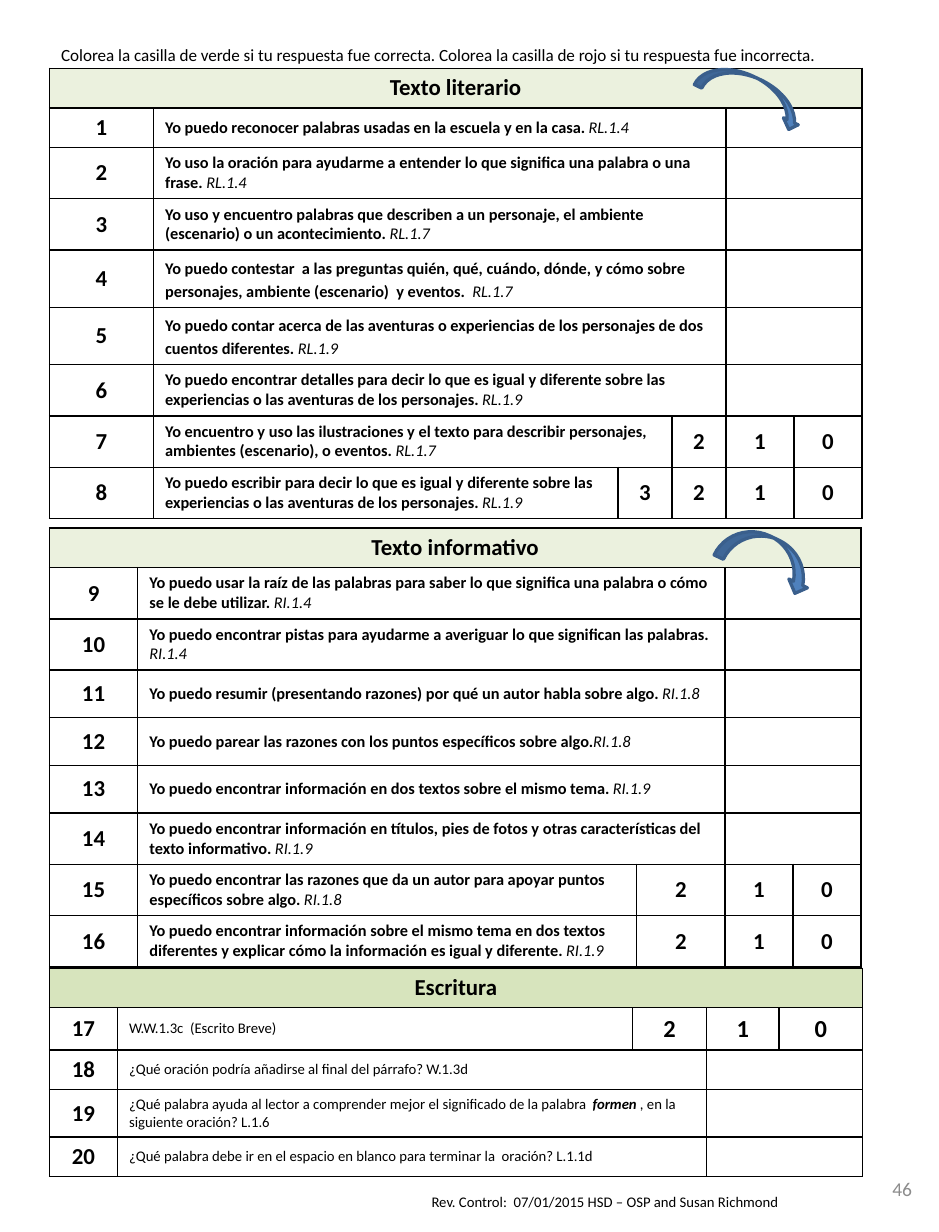
import lxml.etree
import pptx
import pptx.dml.color
import pptx.enum.shapes
import pptx.enum.text
import pptx.oxml.ns
import pptx.util
from dataclasses import dataclass

Cm = pptx.util.Cm
Pt = pptx.util.Pt
RGB = pptx.dml.color.RGBColor.from_string
ALIGN = pptx.enum.text.PP_ALIGN
ANCHOR = pptx.enum.text.MSO_ANCHOR
qn = pptx.oxml.ns.qn


@dataclass(frozen=True)
class Theme:
    font: str = "Calibri"
    ink: str = "000000"
    muted: str = "8C8C8C"
    paper: str = "FFFFFF"
    reading: str = "EBF1DE"
    writing: str = "D7E4BD"
    arrow: str = "4F81BD"
    arrow_line: str = "3A5F8C"
    heading: float = 14
    score: float = 15
    page: float = 12
    intro: float = 10.5
    body: float = 10
    small: float = 9


def add_run(p, text, size, color, font, bold=False, italic=False):
    r = p.add_run()
    r.text = text
    r.font.name = font
    r.font.size = Pt(size)
    r.font.bold = bold
    r.font.italic = italic
    r.font.color.rgb = RGB(color)


class Sheet:
    def __init__(self, prs, theme):
        self.theme = theme
        self.s = prs.slides.add_slide(prs.slide_layouts[5])

    def add_text(self, tf, parts, size, color=None, align=ALIGN.LEFT, spacing=None):
        p = tf.paragraphs[0]
        p.alignment = align
        if spacing:
            p.line_spacing = spacing
        for text, style in parts:
            add_run(p, text, size, color or self.theme.ink, self.theme.font, **style)

    def title(self, text, box):
        sp = self.s.shapes.title
        self.fill_text(sp, box, text, self.theme.intro)

    def label(self, text, box, size, **fmt):
        sp = self.s.shapes.add_textbox(0, 0, 0, 0)
        self.fill_text(sp, box, text, size, **fmt)

    def fill_text(self, sp, box, text, size, anchor=ANCHOR.TOP, **fmt):
        sp.left, sp.top, sp.width, sp.height = map(Cm, box)
        tf = sp.text_frame
        tf.word_wrap = True
        tf.auto_size = pptx.enum.text.MSO_AUTO_SIZE.NONE
        tf.vertical_anchor = anchor
        self.add_text(tf, [(text, {})], size, **fmt)

    def arrow(self, box):
        kind = pptx.enum.shapes.MSO_SHAPE.CURVED_DOWN_ARROW
        sp = self.s.shapes.add_shape(kind, *map(Cm, box))
        sp.rotation = 25.4
        sp.shadow.inherit = False
        sp.fill.solid()
        sp.fill.fore_color.rgb = RGB(self.theme.arrow)
        sp.line.color.rgb = RGB(self.theme.arrow_line)
        sp.line.width = Pt(2)

    def style_cell(self, cell, fill):
        tcPr = cell._tc.get_or_add_tcPr()
        for side in ("a:lnL", "a:lnR", "a:lnT", "a:lnB"):
            ln = lxml.etree.SubElement(tcPr, qn(side), w=str(Pt(1)))
            solid = lxml.etree.SubElement(ln, qn("a:solidFill"))
            lxml.etree.SubElement(solid, qn("a:srgbClr"), val=self.theme.ink)
        cell.fill.solid()
        cell.fill.fore_color.rgb = RGB(fill)
        cell.vertical_anchor = ANCHOR.MIDDLE
        end = cell.text_frame.paragraphs[0]._p.get_or_add_endParaRPr()
        end.set("sz", str(int(self.theme.body * 100)))

    def checklist(self, heading, top, cols, rows, first, fill, styles, size, score):
        th, n = self.theme, len(cols)
        heights = [0.84] + [row[0] for row in rows]
        frame = self.s.shapes.add_table(len(heights), n, Cm(1.07), Cm(top),
                                        Cm(sum(cols)), Cm(sum(heights)))
        table = frame.table
        table.first_row = table.horz_banding = False
        for column, width in zip(table.columns, cols):
            column.width = Cm(width)
        for i, height in enumerate(heights):
            table.rows[i].height = Cm(height)
            for j in range(n):
                self.style_cell(table.cell(i, j), th.paper if i else fill)

        def centred(i, j, text, points):
            self.add_text(table.cell(i, j).text_frame, [(text, {"bold": True})],
                          points, align=ALIGN.CENTER)

        def span(i, start, end):
            if end > start:
                table.cell(i, start).merge(table.cell(i, end))

        span(0, 0, n - 1)
        centred(0, 0, heading, th.heading)
        for i, (_, text, scores, spacing) in enumerate(rows, 1):
            centred(i, 0, str(first + i - 1), th.heading)
            answer = n - (len(scores) or 2)
            span(i, 1, answer - 1)
            self.add_text(table.cell(i, 1).text_frame, zip(text.split("|"), styles),
                          size, spacing=spacing)
            if not scores:
                span(i, answer, n - 1)
            for j, value in enumerate(scores, answer):
                centred(i, j, value, score)


def row(height, text, scores="", spacing=None):
    return height, text, scores, spacing


LITERARY = [
    row(0.84, "Yo puedo reconocer palabras usadas en la escuela y en la casa. |RL.1.4"),
    row(1.1, "Yo uso la oración para ayudarme a entender lo que significa una palabra o una frase. |RL.1.4"),
    row(1.1, "Yo uso y encuentro palabras que describen a un personaje, el ambiente (escenario) o un acontecimiento. |RL.1.7"),
    row(1.23, "Yo puedo contestar  a las preguntas quién, qué, cuándo, dónde, y cómo sobre  personajes, ambiente (escenario)  y eventos.  |RL.1.7", spacing=1.15),
    row(1.23, "Yo puedo contar acerca de las aventuras o experiencias de los personajes de dos cuentos diferentes. |RL.1.9", spacing=1.15),
    row(1.1, "Yo puedo encontrar detalles para decir lo que es igual y diferente sobre las experiencias o las aventuras de los personajes. |RL.1.9"),
    row(1.1, "Yo encuentro y uso las ilustraciones y el texto para describir personajes,  ambientes (escenario), o eventos. |RL.1.7", "210"),
    row(1.1, "Yo puedo escribir para decir lo que es igual y diferente sobre las experiencias o las aventuras de los personajes. |RL.1.9", "3210"),
]
INFORMATIVE = [
    row(1.1, "Yo puedo usar la raíz de las palabras para saber lo que significa una palabra o cómo se le debe utilizar. |RI.1.4"),
    row(1.1, "Yo puedo encontrar pistas para ayudarme a averiguar lo que significan las palabras. |RI.1.4"),
    row(1.03, "Yo puedo resumir (presentando razones) por qué un autor habla sobre algo. |RI.1.8"),
    row(1.03, "Yo puedo parear las razones con los puntos específicos sobre algo.|RI.1.8"),
    row(1.03, "Yo puedo encontrar información en dos textos sobre el mismo tema. |RI.1.9"),
    row(1.1, "Yo puedo encontrar información en títulos, pies de fotos y otras características del texto informativo. |RI.1.9"),
    row(1.1, "Yo puedo encontrar las razones que da un autor para apoyar puntos específicos sobre algo. |RI.1.8", "210"),
    row(1.1, "Yo puedo encontrar información sobre el mismo tema en dos textos diferentes y explicar cómo la información es igual y diferente. |RI.1.9", "210"),
]
WRITING = [
    row(0.91, "W.W.1.3c  (Escrito Breve)", "210"),
    row(0.86, "¿Qué oración podría añadirse al final del párrafo? W.1.3d"),
    row(1.03, "¿Qué palabra ayuda al lector a comprender mejor el significado de la palabra  |formen| , en la siguiente oración? L.1.6"),
    row(0.85, "¿Qué palabra debe ir en el espacio en blanco para terminar la  oración? L.1.1d"),
]


def main():
    prs = pptx.Presentation()
    prs.slide_width, prs.slide_height = Cm(20.32), Cm(26.67)
    th = Theme()
    sheet = Sheet(prs, th)
    statement = [{"bold": True}, {"italic": True}]
    question = [{}, {"bold": True, "italic": True}, {}]

    sheet.title("Colorea la casilla de verde si tu respuesta fue correcta. "
                "Colorea la casilla de rojo si tu respuesta fue incorrecta.",
                (1.07, 0.84, 17.35, 0.71))
    sheet.checklist("Texto literario", 1.48, [2.25, 10.05, 1.17, 1.17, 1.47, 1.47],
                    LITERARY, 1, th.reading, statement, th.body, th.heading)
    sheet.checklist("Texto informativo", 11.43, [1.91, 10.8, 1.91, 1.47, 1.47],
                    INFORMATIVE, 9, th.reading, statement, th.body, th.heading)
    sheet.checklist("Escritura", 20.96, [1.47, 11.15, 1.6, 1.57, 1.8],
                    WRITING, 17, th.writing, question, th.small, th.score)
    sheet.arrow((15.06, 1.68, 2.44, 0.71))
    sheet.arrow((15.54, 11.63, 2.16, 0.89))
    sheet.label("Rev. Control:  07/01/2015 HSD – OSP and Susan Richmond",
                (9.09, 25.7, 10.16, 0.64), th.small)
    sheet.label("46", (17.78, 25.2, 2.21, 1.07), th.page, color=th.muted,
                align=ALIGN.RIGHT, anchor=ANCHOR.MIDDLE)
    prs.save("out.pptx")


if __name__ == "__main__":
    main()
